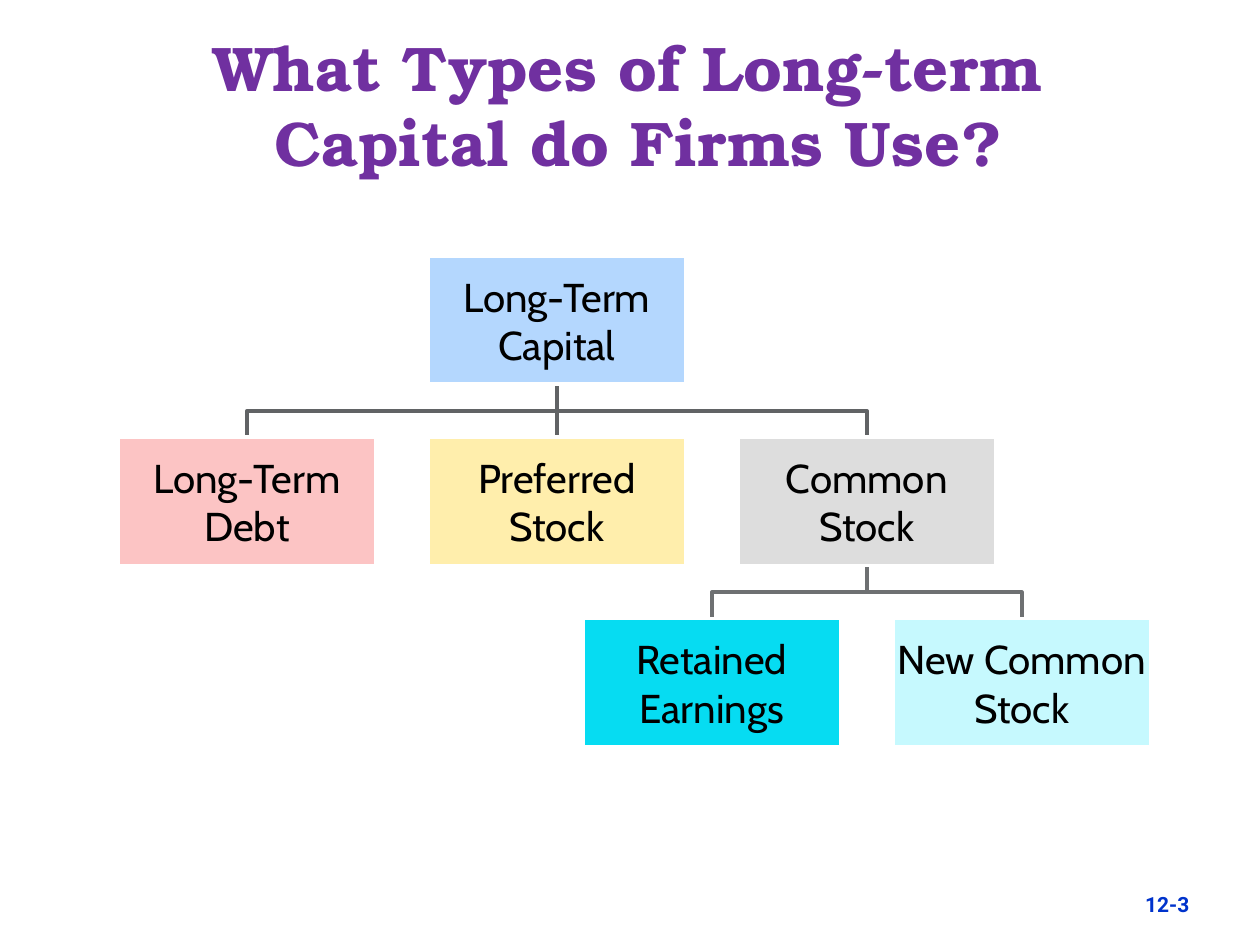
from lxml import etree
from pptx import Presentation
from pptx.dml.color import RGBColor
from pptx.enum import shapes, text
from pptx.oxml.ns import qn
from pptx.util import Inches, Pt

PURPLE = RGBColor(0x70, 0x30, 0xA0)
BLUE = RGBColor(0x00, 0x33, 0xCC)
BLACK = RGBColor(0x00, 0x00, 0x00)
WHITE = RGBColor(0xFF, 0xFF, 0xFF)
UPPER_LINE = RGBColor(0x61, 0x63, 0x65)
LOWER_LINE = RGBColor(0x6E, 0x70, 0x72)
SKY = RGBColor(0xB4, 0xD7, 0xFE)
PINK = RGBColor(0xFC, 0xC4, 0xC4)
YELLOW = RGBColor(0xFF, 0xEE, 0xAC)
GREY = RGBColor(0xDD, 0xDD, 0xDD)
CYAN = RGBColor(0x06, 0xDC, 0xF2)
PALE_CYAN = RGBColor(0xC6, 0xF9, 0xFE)

NODE_WIDTH, NODE_HEIGHT = Inches(2.04), Inches(1.02)
HALF_COLUMN, LEVEL = Inches(1.23), Inches(1.44)

# name: (label, half columns from the left, level, fill)
NODES = {
    "capital": ("Long-Term Capital", 2, 0, SKY),
    "debt": ("Long-Term Debt", 0, 1, PINK),
    "preferred": ("Preferred Stock", 2, 1, YELLOW),
    "common": ("Common Stock", 4, 1, GREY),
    "retained": ("Retained Earnings", 3, 2, CYAN),
    "new": ("New Common Stock", 5, 2, PALE_CYAN),
}
BRANCHES = [
    ("common", "new", LOWER_LINE),
    ("common", "retained", LOWER_LINE),
    ("capital", "common", UPPER_LINE),
    ("capital", "preferred", UPPER_LINE),
    ("capital", "debt", UPPER_LINE),
]


def style_text(frame, words, size, font, color, bold=False, align=None):
    frame.text = words
    frame.word_wrap = True
    for para in frame.paragraphs:
        para.alignment = align
        for span in para.runs:
            span.font.size = Pt(size)
            span.font.name = font
            span.font.bold = bold
            span.font.color.rgb = color


def add_title(page, left, top, width, height):
    box = page.shapes.add_textbox(left, top, width, height)
    box.text_frame.vertical_anchor = text.MSO_ANCHOR.MIDDLE
    style_text(box.text_frame, "What Types of Long-term\v Capital do Firms Use?",
               36, "TeX Gyre Bonum", PURPLE, True, text.PP_ALIGN.CENTER)


def add_page_number(page, left, top, width, height):
    box = page.shapes.add_textbox(left, top, width, height)
    style_text(box.text_frame, "12-3", 12, "Roboto", BLUE, True)


def add_branch(page, start, end, color):
    (x1, y1), (x2, y2) = start, end
    if x1 == x2:
        branch = page.shapes.add_connector(shapes.MSO_CONNECTOR.STRAIGHT, x1, y1, x2, y2)
        etree.SubElement(branch._element.spPr, qn("a:effectLst"))
    else:
        middle = (y1 + y2) // 2
        builder = page.shapes.build_freeform(x1, y1)
        builder.add_line_segments([(x1, middle), (x2, middle), end], close=False)
        branch = builder.convert_to_shape()
        branch.shadow.inherit = False
        branch.fill.background()
    branch.line.color.rgb = color
    branch.line.width = Pt(2)


def add_node(page, left, top, label, fill):
    node = page.shapes.add_shape(shapes.MSO_SHAPE.RECTANGLE, left, top,
                                 NODE_WIDTH, NODE_HEIGHT)
    node.shadow.inherit = False
    node.fill.solid()
    node.fill.fore_color.rgb = fill
    node.line.color.rgb = WHITE
    node.line.width = Pt(2)
    frame = node.text_frame
    frame.margin_left = frame.margin_right = Inches(0.02)
    frame.margin_top = frame.margin_bottom = Inches(0.02)
    frame.vertical_anchor = text.MSO_ANCHOR.MIDDLE
    style_text(frame, label, 23, "Cabin", BLACK, align=text.PP_ALIGN.CENTER)


def add_tree(page, left, top):
    corners = {name: (left + column * HALF_COLUMN, top + level * LEVEL)
               for name, (_, column, level, _) in NODES.items()}
    for parent, child, color in BRANCHES:
        parent_left, parent_top = corners[parent]
        child_left, child_top = corners[child]
        add_branch(page, (parent_left + NODE_WIDTH // 2, parent_top + NODE_HEIGHT),
                   (child_left + NODE_WIDTH // 2, child_top), color)
    for name, (label, _, _, fill) in NODES.items():
        add_node(page, *corners[name], label, fill)


def main():
    deck = Presentation()
    deck.slide_width, deck.slide_height = Inches(10), Inches(7.5)
    page = deck.slides.add_slide(deck.slide_layouts[6])
    add_page_number(page, Inches(8.99), Inches(7.03), Inches(0.92), Inches(0.34))
    add_tree(page, Inches(0.94), Inches(2.03))
    add_title(page, Inches(0.31), Inches(0.25), Inches(9.35), Inches(1.15))
    deck.save("out.pptx")


if __name__ == "__main__":
    main()
